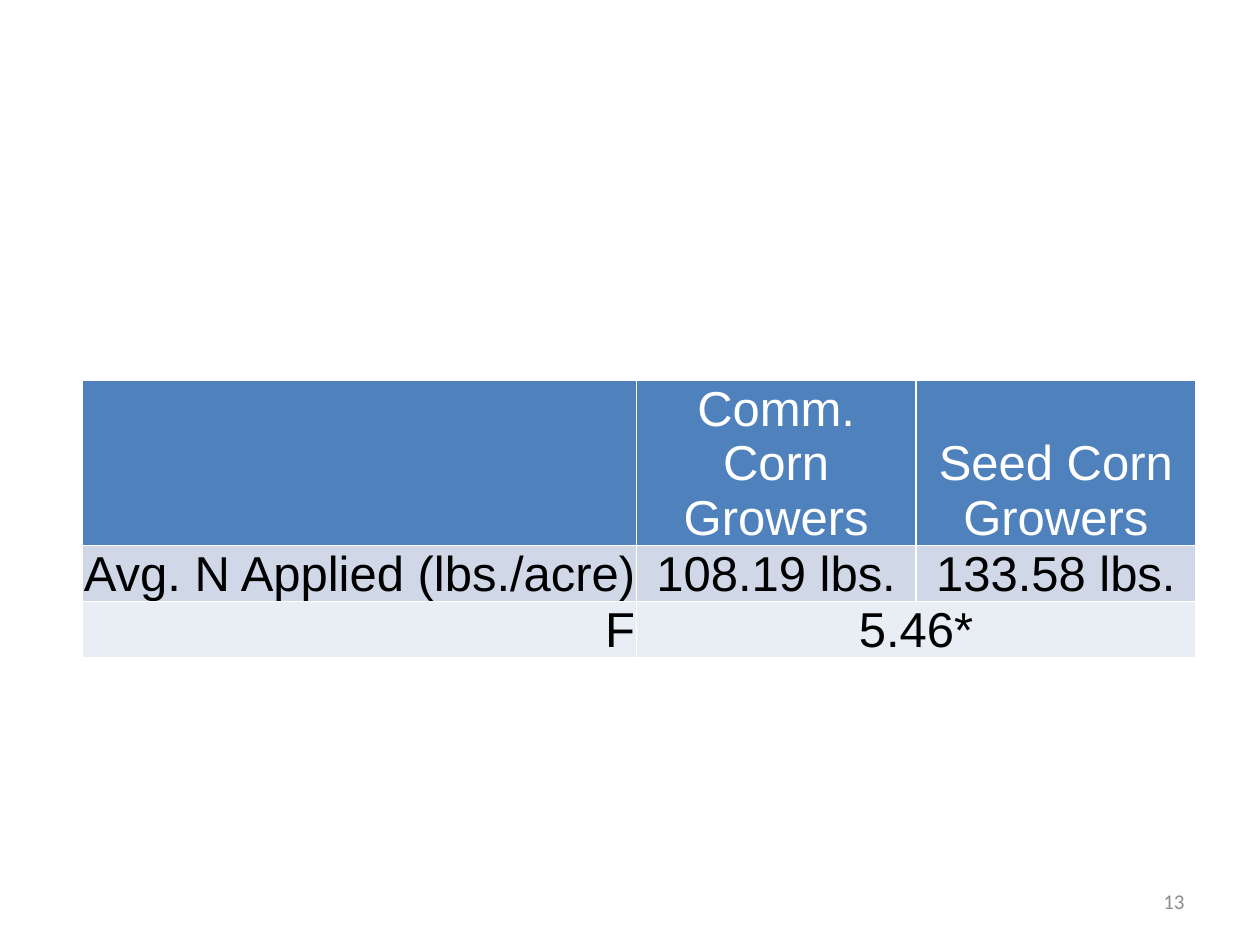
from lxml import etree
from pptx import Presentation
from pptx.dml.color import RGBColor
from pptx.enum.text import MSO_ANCHOR as Anchor, PP_ALIGN as Align
from pptx.oxml.ns import qn
from pptx.util import Inches, Pt


def rgb(value):
    return RGBColor.from_string(value)


class SlideBuilder:
    WHITE, BLACK, GREY = "FFFFFF", "000000", "8C8C8C"
    HEADER = "4F81BD"
    BANDS = ("D0D8E8", "E9EDF4")
    TABLE_FONT, NUMBER_FONT = "Arial", "Calibri"
    TABLE_SIZE, NUMBER_SIZE = 28, 12

    def __init__(self, slide):
        self.slide = slide

    def add_text(self, tf, text, font, size, color, align):
        p = tf.paragraphs[0]
        p.alignment = align
        for i, line in enumerate(text.split("\n")):
            if i:
                p.add_line_break()
            r = p.add_run()
            r.text = line
            r.font.name = font
            r.font.size = Pt(size)
            r.font.color.rgb = rgb(color)

    def border(self, cell):
        tc_pr = cell._tc.get_or_add_tcPr()
        for side in ("lnL", "lnR", "lnT", "lnB"):
            ln = etree.SubElement(tc_pr, qn(f"a:{side}"), w=str(Pt(1)))
            fill = etree.SubElement(ln, qn("a:solidFill"))
            etree.SubElement(fill, qn("a:srgbClr"), val=self.WHITE)

    def cell(self, cell, text, row, col):
        is_header = row == 0
        self.border(cell)
        cell.fill.solid()
        cell.fill.fore_color.rgb = rgb(self.HEADER if is_header else self.BANDS[row - 1])
        if not text:
            return
        cell.vertical_anchor = Anchor.BOTTOM
        cell.margin_left = cell.margin_right = Inches(0.02 if is_header else 0.01)
        cell.margin_top, cell.margin_bottom = Inches(0.01), 0
        self.add_text(cell.text_frame, text, self.TABLE_FONT, self.TABLE_SIZE,
                      self.WHITE if is_header else self.BLACK,
                      Align.CENTER if col else Align.RIGHT)

    def table(self, rows, left, top, col_widths, row_height):
        table = self.slide.shapes.add_table(
            len(rows), len(col_widths), Inches(left), Inches(top),
            Inches(sum(col_widths)), Inches(row_height * len(rows))).table
        for column, width in zip(table.columns, col_widths):
            column.width = Inches(width)
        for i, row in enumerate(rows):
            for j, text in enumerate(row):
                self.cell(table.cell(i, j), text, i, j)
        return table

    def slide_number(self, text, left, top, width, height):
        box = self.slide.shapes.add_textbox(
            Inches(left), Inches(top), Inches(width), Inches(height))
        tf = box.text_frame
        tf.word_wrap = True
        tf.vertical_anchor = Anchor.MIDDLE
        self.add_text(tf, text, self.NUMBER_FONT, self.NUMBER_SIZE, self.GREY, Align.RIGHT)


def main():
    prs = Presentation()
    prs.slide_width, prs.slide_height = Inches(10), Inches(7.5)
    s = SlideBuilder(prs.slides.add_slide(prs.slide_layouts[6]))

    # Nitrogen comparison; the F statistic spans both grower groups
    rows = [
        ("", "Comm. Corn\nGrowers", "Seed Corn\nGrowers"),
        ("Avg. N Applied (lbs./acre)", "108.19 lbs.", "133.58 lbs."),
        ("F", "5.46*", ""),
    ]
    table = s.table(rows, 0.65, 3.02, (4.4, 2.22, 2.22), 0.41)
    table.cell(2, 1).merge(table.cell(2, 2))

    # Slide number
    s.slide_number("13", 7.17, 6.95, 2.33, 0.4)

    prs.save("out.pptx")


if __name__ == "__main__":
    main()
